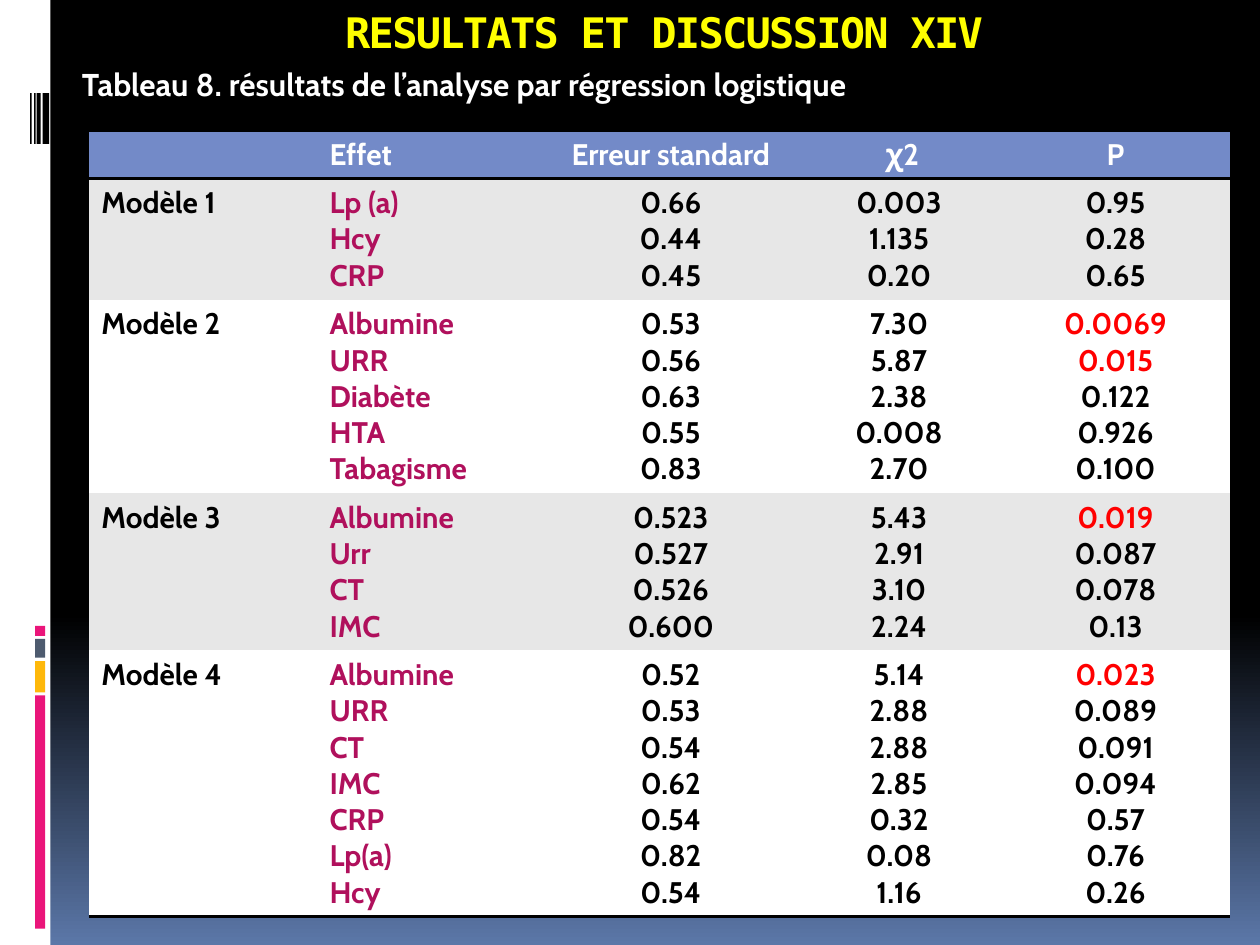
"""Build the slide with the logistic regression results table."""
import copy

import lxml.etree
import pptx
import pptx.dml.color
import pptx.enum.shapes
import pptx.enum.text
import pptx.oxml
import pptx.oxml.ns
import pptx.util

Cm, Pt = pptx.util.Cm, pptx.util.Pt
ALIGN = pptx.enum.text.PP_ALIGN


def rgb(value):
    return pptx.dml.color.RGBColor.from_string(value)


def add_run(p, text, size, color, font="Cabin"):
    r = p.add_run()
    r.text = text
    r.font.name, r.font.size, r.font.bold = font, Pt(size), True
    r.font.color.rgb = rgb(color)
    return r


prs = pptx.Presentation()
prs.slide_width, prs.slide_height = Cm(25.4), Cm(19.05)
s = prs.slides.add_slide(prs.slide_layouts[6])

fill = s.background.fill
fill.gradient()
fill.gradient_angle = 270
for stop, position, color in zip(fill.gradient_stops, (0, 1), ("000000", "5B77A8")):
    stop.position = position
    stop.color.rgb = rgb(color)
stops = s._element.find(".//" + pptx.oxml.ns.qn("a:gsLst"))
middle = copy.deepcopy(stops[0])
middle.set("pos", "65000")
stops.insert(1, middle)

bars = [
    (0, 0, 1.02, 19.05, "FFFFFF"),
    (0.71, 14.02, 0.2, 4.7, "EA157A"),
    (0.71, 13.33, 0.2, 0.63, "FEB80A"),
    (0.71, 12.88, 0.2, 0.38, "4E5B6F"),
    (0.71, 12.62, 0.2, 0.2, "EA157A"),
    (0.86, 1.88, 0.13, 1.02, "000000"),
    (0.74, 1.88, 0.08, 1.02, "000000"),
    (0.69, 1.88, 0.03, 1.02, "000000"),
    (0.61, 1.88, 0.03, 1.02, "000000"),
]
for left, top, width, height, color in bars:
    sp = s.shapes.add_shape(pptx.enum.shapes.MSO_SHAPE.RECTANGLE,
                            Cm(left), Cm(top), Cm(width), Cm(height))
    sp.shadow.inherit = False
    sp.fill.solid()
    sp.fill.fore_color.rgb = rgb(color)
    sp.line.fill.background()

sp = s.shapes.add_textbox(Cm(2.59), Cm(0), Cm(21.59), Cm(1.19))
tf = sp.text_frame
tf.word_wrap = True
p = tf.paragraphs[0]
p.alignment = ALIGN.CENTER
r = add_run(p, "RESULTATS ET DISCUSSION XIV", 24, "FFFF00", "DejaVu Sans Mono")
r.font._element.set("spc", "-100")

sp = s.shapes.add_textbox(Cm(1.4), Cm(1.19), Cm(20.04), Cm(1.02))
tf = sp.text_frame
tf.word_wrap = True
add_run(tf.paragraphs[0], "Tableau 8. résultats de l’analyse par régression logistique", 18, "FFFFFF")

rows = [
    ["", "Effet", "Erreur standard", " χ2", "P"],
    ["Modèle 1", "Lp (a)|Hcy|CRP", "0.66|0.44|0.45", "0.003|1.135|0.20", "0.95|0.28|0.65"],
    ["Modèle 2", "Albumine|URR|Diabète|HTA|Tabagisme", "0.53|0.56|0.63|0.55|0.83",
     "7.30|5.87|2.38|0.008|2.70", "0.0069|0.015|0.122|0.926|0.100"],
    ["Modèle 3", "Albumine|Urr|CT|IMC", "0.523|0.527|0.526|0.600",
     "5.43|2.91|3.10|2.24", "0.019|0.087|0.078|0.13"],
    ["Modèle 4", "Albumine|URR|CT|IMC|CRP|Lp(a)|Hcy", "0.52|0.53|0.54|0.62|0.54|0.82|0.54",
     "5.14|2.88|2.88|2.85|0.32|0.08|1.16", "0.023|0.089|0.091|0.094|0.57|0.76|0.26"],
]
significant = {"0.0069", "0.015", "0.019", "0.023"}
borders = {0: ["lnT", "lnB"], 4: ["lnB"]}
heights = [0.25 + 0.73 * len(row[1].split("|")) for row in rows]

frame = s.shapes.add_table(len(rows), 5, Cm(1.79), Cm(2.62), Cm(23), Cm(sum(heights)))
table = frame.table
table.first_row = table.horz_banding = False
table._tbl.tblPr.find(pptx.oxml.ns.qn("a:tableStyleId")).text = "{2D5ABB26-0587-4C30-8999-92F81FD0307C}"
for column, width in zip(table.columns, (4.6, 4.6, 5.07, 4.13, 4.6)):
    column.width = Cm(width)

for i, row in enumerate(rows):
    table.rows[i].height = Cm(heights[i])
    for j, content in enumerate(row):
        cell = table.cell(i, j)
        cell.fill.solid()
        cell.fill.fore_color.rgb = rgb("738AC8" if i == 0 else "E7E7E7" if i % 2 else "FFFFFF")
        tc_pr = cell._tc.get_or_add_tcPr()
        for k, side in enumerate(borders.get(i, [])):
            tc_pr.insert(k, pptx.oxml.parse_xml(
                f'<a:{side} {pptx.oxml.ns.nsdecls("a")} w="25400"><a:solidFill>'
                f'<a:srgbClr val="000000"/></a:solidFill></a:{side}>'))
        tf = cell.text_frame
        for k, text in enumerate(content.split("|")):
            p = tf.add_paragraph() if k else tf.paragraphs[0]
            p.alignment = ALIGN.CENTER if j > 1 else ALIGN.LEFT
            if not text:
                end = lxml.etree.SubElement(p._p, pptx.oxml.ns.qn("a:endParaRPr"))
                end.set("sz", "1700")
                continue
            if i == 0:
                color = "FFFFFF"
            elif j == 1:
                color = "B0105C"
            else:
                color = "FF0000" if text in significant else "000000"
            add_run(p, text, 17, color)

prs.save("out.pptx")
